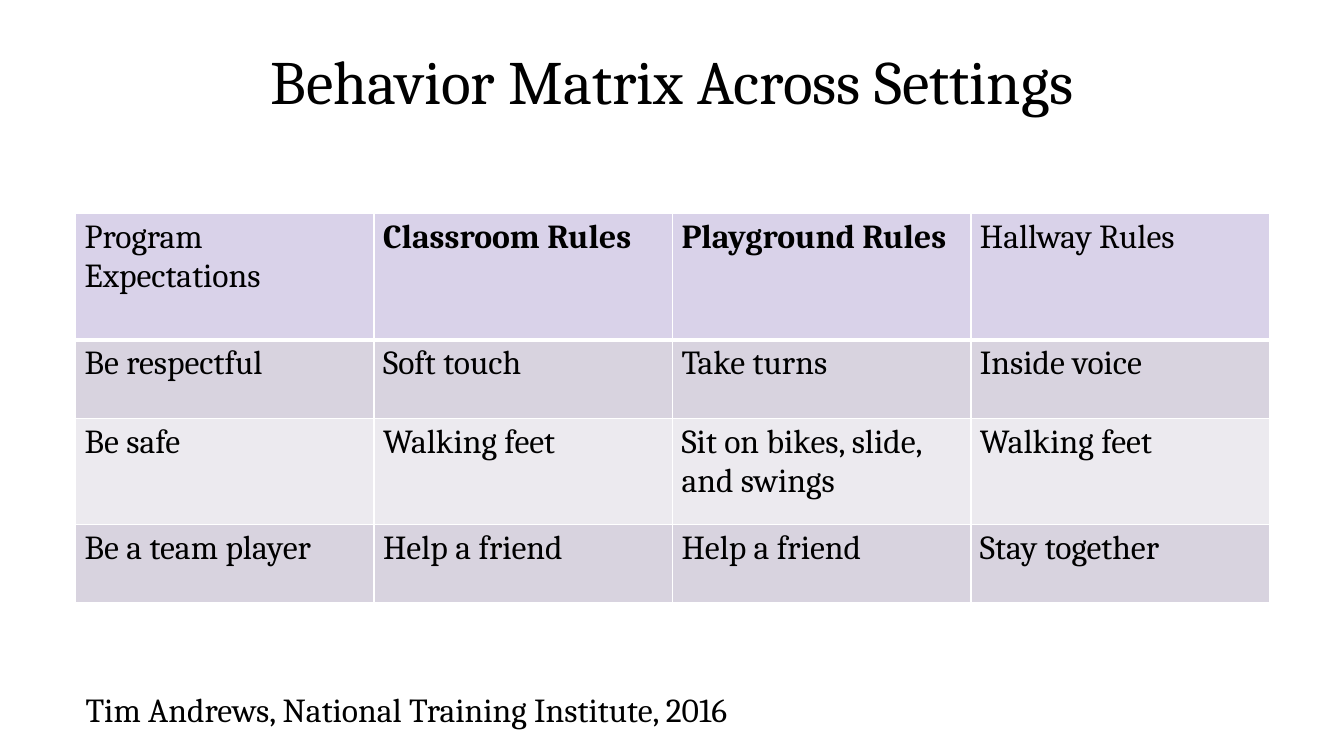
from lxml.etree import SubElement
from pptx import Presentation
from pptx.dml.color import RGBColor
from pptx.enum.text import MSO_ANCHOR, PP_ALIGN
from pptx.oxml.ns import qn
from pptx.util import Inches, Pt

COLORS = {
    "text": "000000",
    "line": "FFFFFF",
    "head": "D9D2E9",
    "dark": "D8D3DF",
    "light": "ECEAEF",
}


def write(frame, text, size=24, bold=False, align=PP_ALIGN.LEFT, space=1.0):
    frame.word_wrap = True
    par = frame.paragraphs[0]
    par.alignment = align
    par.line_spacing = space
    run = par.add_run()
    run.text = text
    run.font.name = "Cambria"
    run.font.size = Pt(size)
    run.font.bold = bold
    run.font.color.rgb = RGBColor.from_string(COLORS["text"])


deck = Presentation()
deck.slide_width = Inches(13.33)
deck.slide_height = Inches(7.5)
slide = deck.slides.add_slide(deck.slide_layouts[5])

title = slide.shapes.title
title.left, title.top = Inches(0.92), Inches(0.31)
title.width, title.height = Inches(11.5), Inches(1.05)
title.text_frame.vertical_anchor = MSO_ANCHOR.MIDDLE
write(title.text_frame, "Behavior Matrix Across Settings", size=44,
      align=PP_ALIGN.CENTER, space=0.9)

rules = [
    ["Program Expectations", "Classroom Rules", "Playground Rules", "Hallway Rules"],
    ["Be respectful", "Soft touch", "Take turns", "Inside voice"],
    ["Be safe", "Walking feet", "Sit on bikes, slide, and swings", "Walking feet"],
    ["Be a team player", "Help a friend", "Help a friend", "Stay together"],
]
fills = ["head", "dark", "light", "dark"]
heights = [1.25, 0.78, 1.05, 0.78]

table = slide.shapes.add_table(
    len(rules), len(rules[0]), Inches(0.75), Inches(2.12),
    Inches(11.84), Inches(sum(heights))).table
table.first_row = False
table.horz_banding = False
for col in table.columns:
    col.width = Inches(2.96)

for r, row in enumerate(rules):
    table.rows[r].height = Inches(heights[r])
    for c, text in enumerate(row):
        cell = table.cell(r, c)
        cell.margin_left = cell.margin_right = Inches(0.09)
        cell.margin_top = cell.margin_bottom = Inches(0.05)
        cell.vertical_anchor = MSO_ANCHOR.TOP
        write(cell.text_frame, text, bold=r == 0 and c in (1, 2))
        props = cell._tc.get_or_add_tcPr()
        for side in "LRTB":
            thick = (r, side) in [(0, "B"), (1, "T")]
            edge = SubElement(props, qn(f"a:ln{side}"), w=str(Pt(3 if thick else 1)))
            paint = SubElement(edge, qn("a:solidFill"))
            SubElement(paint, qn("a:srgbClr"), val=COLORS["line"])
        cell.fill.solid()
        cell.fill.fore_color.rgb = RGBColor.from_string(COLORS[fills[r]])

source = slide.shapes.add_textbox(Inches(0.75), Inches(6.77), Inches(7.83), Inches(0.52))
source.text_frame.vertical_anchor = MSO_ANCHOR.MIDDLE
write(source.text_frame, "Tim Andrews, National Training Institute, 2016")

deck.save("out.pptx")
